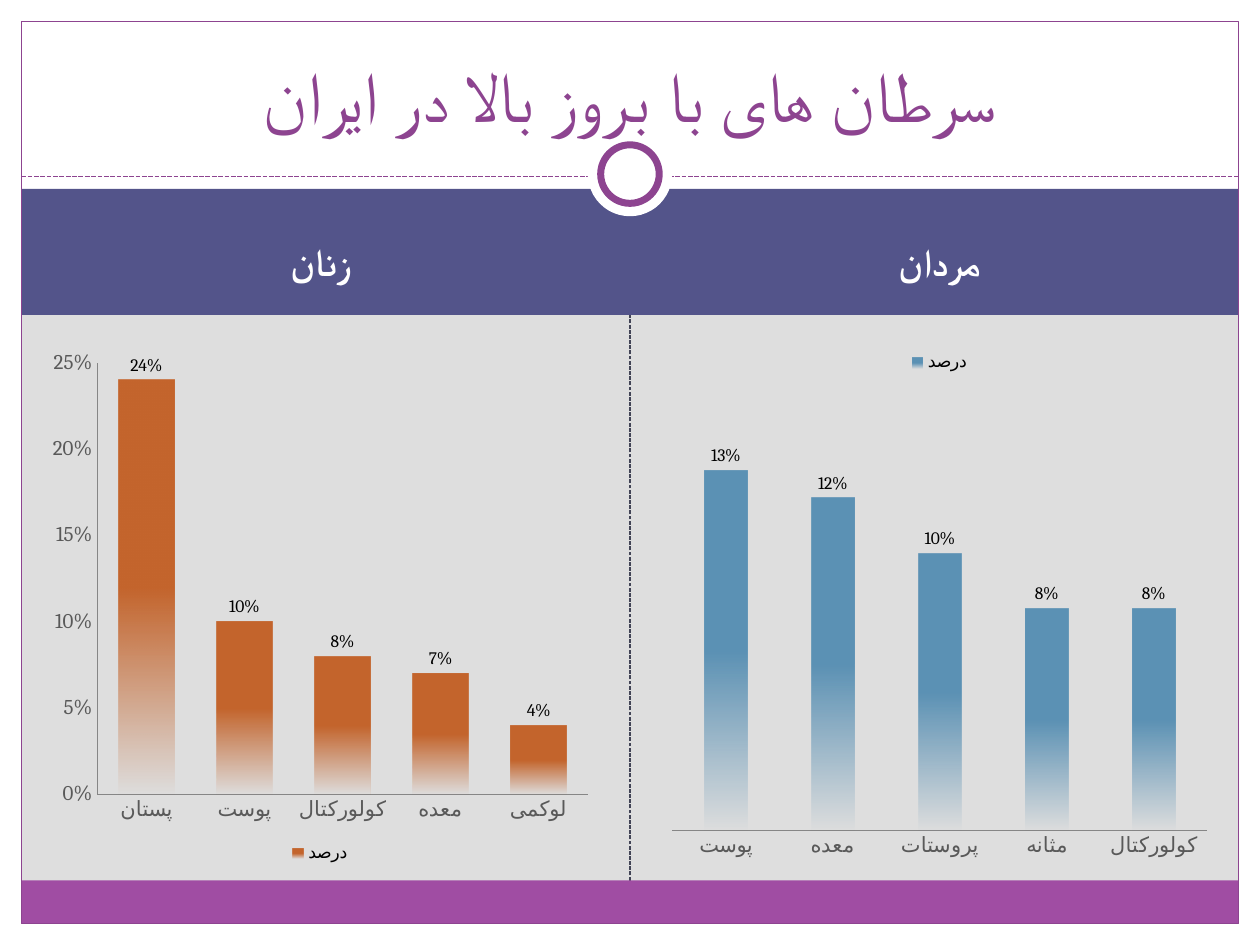
from dataclasses import dataclass

from pptx import Presentation
from pptx.chart.data import CategoryChartData
from pptx.dml.color import RGBColor
from pptx.enum.chart import XL_CHART_TYPE, XL_LABEL_POSITION, XL_LEGEND_POSITION, XL_TICK_MARK
from pptx.enum.dml import MSO_LINE
from pptx.enum.shapes import MSO_CONNECTOR, MSO_SHAPE
from pptx.enum.text import MSO_ANCHOR, PP_ALIGN
from pptx.oxml.ns import qn
from pptx.util import Cm, Pt

COLUMN = XL_CHART_TYPE.COLUMN_CLUSTERED
OUTSIDE = XL_LABEL_POSITION.OUTSIDE_END
TOP, BOTTOM = XL_LEGEND_POSITION.TOP, XL_LEGEND_POSITION.BOTTOM
NO_TICK = XL_TICK_MARK.NONE
DASH = MSO_LINE.SQUARE_DOT
STRAIGHT = MSO_CONNECTOR.STRAIGHT
RECT, OVAL = MSO_SHAPE.RECTANGLE, MSO_SHAPE.OVAL
MIDDLE, BASE = MSO_ANCHOR.MIDDLE, MSO_ANCHOR.BOTTOM
CENTER = PP_ALIGN.CENTER

FONT = "Cambria"
WHITE, PURPLE, GREY = "FFFFFF", "8D4490", "595959"
W, H = 25.4, 19.05
EDGE = 0.43
PANEL_W = 11.23


@dataclass
class Block:
    left: float
    top: float
    width: float
    height: float
    fill: str | None = None
    line: str | None = None
    weight: float = 0.75
    kind: MSO_SHAPE = RECT


@dataclass
class Panel:
    left: float
    heading: str
    cats: list[str]
    vals: list[float]
    color: str
    gap: int
    top_value: float
    legend: XL_LEGEND_POSITION
    show_axis: bool


def rgb(code: str) -> RGBColor:
    return RGBColor.from_string(code)


def set_font(font, size: float, color: str, bold: bool = False) -> None:
    font.name, font.size, font.bold = FONT, Pt(size), bold
    font.color.rgb = rgb(color)


def add_block(s, b: Block) -> None:
    sp = s.shapes.add_shape(b.kind, Cm(b.left), Cm(b.top), Cm(b.width), Cm(b.height))
    sp.shadow.inherit = False
    if b.fill:
        sp.fill.solid()
        sp.fill.fore_color.rgb = rgb(b.fill)
    else:
        sp.fill.background()
    if b.line:
        sp.line.color.rgb = rgb(b.line)
        sp.line.width = Pt(b.weight)
    else:
        sp.line.fill.background()


def add_dashes(s, x1: float, y1: float, x2: float, y2: float, color: str, weight: float) -> None:
    c = s.shapes.add_connector(STRAIGHT, Cm(x1), Cm(y1), Cm(x2), Cm(y2))
    c.line.color.rgb = rgb(color)
    c.line.width = Pt(weight)
    c.line.dash_style = DASH
    sp_pr = c._element.spPr
    sp_pr.append(sp_pr.makeelement(qn("a:effectLst"), {}))


def add_text(s, text: str, left: float, top: float, width: float, height: float,
             size: float, color: str, anchor: MSO_ANCHOR, bold: bool = False):
    tf = s.shapes.add_textbox(Cm(left), Cm(top), Cm(width), Cm(height)).text_frame
    tf.word_wrap = True
    tf.vertical_anchor = anchor
    p = tf.paragraphs[0]
    p.text = text
    p.alignment = CENTER
    set_font(p.font, size, color, bold)
    return p


def fade_down(series, color: str) -> None:
    """Solid colour to mid-height, then fading to clear at the foot."""
    fill = series.format.fill
    fill.gradient()
    fill.gradient_angle = 270
    for stop, position in zip(fill.gradient_stops, (0.5, 1)):
        stop.color.rgb = rgb(color)
        stop.position = position
    last = series._element.xpath("c:spPr//a:srgbClr")[-1]
    last.append(last.makeelement(qn("a:alpha"), {"val": "0"}))


def style_axis(axis) -> None:
    axis.major_tick_mark = axis.minor_tick_mark = NO_TICK
    axis.has_major_gridlines = False
    axis.format.line.color.rgb = rgb("868686")
    set_font(axis.tick_labels.font, 12, GREY)


def add_panel(s, panel: Panel) -> None:
    add_text(s, panel.heading, panel.left, 4.24, PANEL_W, 2.03, 22, WHITE, MIDDLE, True)
    data = CategoryChartData(number_format="0%")
    data.categories = panel.cats
    data.add_series("درصد", panel.vals)
    chart = s.shapes.add_chart(COLUMN, Cm(panel.left), Cm(6.86), Cm(PANEL_W), Cm(10.62), data).chart
    set_font(chart.font, 10, "000000")
    chart.has_title = False
    chart.has_legend = True
    chart.legend.position = panel.legend
    chart.legend.include_in_layout = False

    style_axis(chart.category_axis)
    axis = chart.value_axis
    style_axis(axis)
    axis.minimum_scale, axis.maximum_scale = 0, panel.top_value
    axis.visible = panel.show_axis
    if panel.show_axis:
        axis.major_unit = 0.05
    axis.tick_labels.number_format = "0%"
    axis.tick_labels.number_format_is_linked = False

    plot = chart.plots[0]
    plot.gap_width = panel.gap
    plot.vary_by_categories = False
    fade_down(plot.series[0], panel.color)
    plot.has_data_labels = True
    labels = plot.data_labels
    labels.show_value = True
    labels.number_format, labels.number_format_is_linked = "0%", False
    labels.position = OUTSIDE
    set_font(labels.font, 10, "000000")


BLOCKS = [
    # White margins and title area
    Block(0, 0, W, 4.01, WHITE),
    Block(0, H - EDGE, W, EDGE, WHITE),
    Block(0, 0, EDGE, H, WHITE),
    Block(W - EDGE, 0, EDGE, H, WHITE),
    # Heading band, foot band and frame
    Block(EDGE, 3.81, W - 2 * EDGE, 2.54, "53548A"),
    Block(EDGE, 17.75, W - 2 * EDGE, 0.87, "A04DA3"),
    Block(EDGE, EDGE, W - 2 * EDGE, H - 2 * EDGE, None, PURPLE),
]
RING = [
    Block(11.85, 2.66, 1.7, 1.7, WHITE, kind=OVAL),
    Block(12.11, 2.92, 1.18, 1.18, WHITE, PURPLE, 4, OVAL),
]
PANELS = [
    Panel(0.84, "زنان", ["پستان", "پوست", "کولورکتال", "معده", "لوکمی"],
          [0.24, 0.1, 0.08, 0.07, 0.04], "C4652D", 75, 0.25, BOTTOM, True),
    Panel(13.33, "مردان", ["پوست", "معده", "پروستات", "مثانه", "کولورکتال"],
          [0.13, 0.12, 0.1, 0.08, 0.08], "5C92B5", 150, 0.16, TOP, False),
]


def main() -> None:
    prs = Presentation()
    prs.slide_width, prs.slide_height = Cm(W), Cm(H)
    s = prs.slides.add_slide(prs.slide_layouts[6])
    s.background.fill.solid()
    s.background.fill.fore_color.rgb = rgb("DEDEDE")

    # Frame, dividers and ring
    add_dashes(s, W / 2, 17.75, W / 2, 6.12, "424456", 0.75)
    for block in BLOCKS:
        add_block(s, block)
    add_dashes(s, EDGE, 3.56, W - EDGE, 3.56, PURPLE, 0.9)
    for block in RING:
        add_block(s, block)

    # Title
    p = add_text(s, "سرطان های با بروز بالا در ایران", 0.85, 0.76, 23.7, 2.11, 40, PURPLE, BASE)
    p._p.get_or_add_pPr().set("rtl", "1")

    # Headings and charts
    for panel in PANELS:
        add_panel(s, panel)
    prs.save("out.pptx")


if __name__ == "__main__":
    main()
